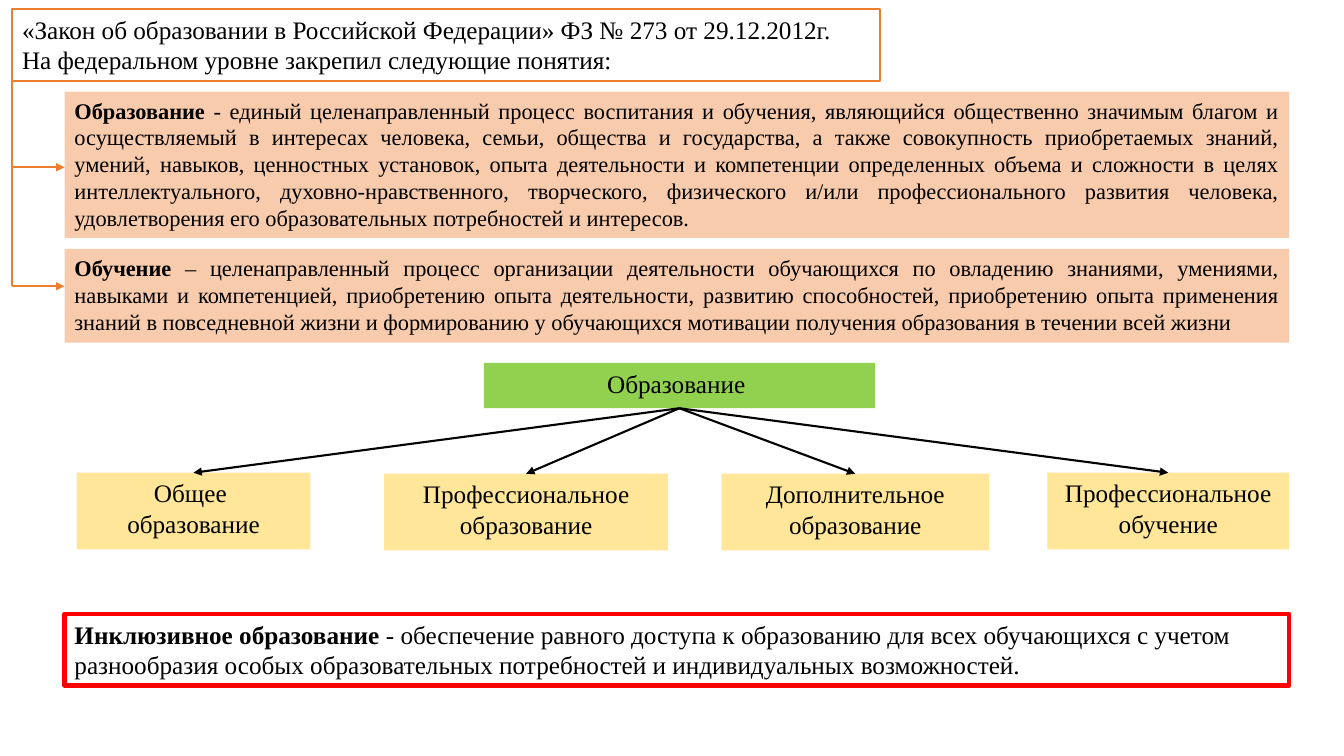
import pptx
import pptx.dml.color
import pptx.enum.shapes
import pptx.enum.text
import pptx.oxml
import pptx.oxml.ns
import pptx.util

Pt = pptx.util.Pt
RGBColor = pptx.dml.color.RGBColor
Align = pptx.enum.text.PP_ALIGN

BLACK = RGBColor(0x00, 0x00, 0x00)
WHITE = RGBColor(0xFF, 0xFF, 0xFF)
RED = RGBColor(0xFF, 0x00, 0x00)
ORANGE = RGBColor(0xED, 0x7D, 0x31)
PEACH = RGBColor(0xF8, 0xCB, 0xAD)
GREEN = RGBColor(0x92, 0xD0, 0x50)
YELLOW = RGBColor(0xFF, 0xE6, 0x99)

FONT = "Times New Roman"
LEFT, WIDTH = 46.08, 874.8
TRUNK_X, TRUNK_TOP, TRUNK_BOTTOM = 8.64, 57.6, 204.48

DEFINITIONS = [
    (65.52, 104.4, "Образование",
     " - единый целенаправленный процесс воспитания и обучения, являющийся "
     "общественно значимым благом и осуществляемый в интересах человека, семьи, "
     "общества и государства, а также совокупность приобретаемых знаний, умений, "
     "навыков, ценностных установок, опыта деятельности и компетенции определенных "
     "объема и сложности в целях интеллектуального, духовно-нравственного, "
     "творческого, физического и/или профессионального развития человека, "
     "удовлетворения его образовательных потребностей и интересов."),
    (177.84, 66.96, "Обучение",
     " – целенаправленный процесс организации деятельности обучающихся по овладению "
     "знаниями, умениями, навыками и компетенцией, приобретению опыта деятельности, "
     "развитию способностей, приобретению опыта применения знаний в повседневной "
     "жизни и формированию у обучающихся мотивации получения образования в течении "
     "всей жизни"),
]

BRANCHES = [
    (54.72, 337.68, 167.04, "Общее \nобразование"),
    (274.32, 338.4, 203.04, "Профессиональное образование"),
    (515.52, 338.4, 190.8, "Дополнительное образование"),
    (748.08, 337.68, 172.8, "Профессиональное обучение"),
]


def add_run(paragraph, text, size, bold):
    run = paragraph.add_run()
    run.text = text
    run.font.name = FONT
    run.font.size = Pt(size)
    run.font.bold = bold
    run.font.color.rgb = BLACK


def write_text(shape, text, term="", size=18, align=Align.LEFT):
    frame = shape.text_frame
    frame.word_wrap = True
    frame.auto_size = pptx.enum.text.MSO_AUTO_SIZE.SHAPE_TO_FIT_TEXT
    for index, line in enumerate(text.split("\n")):
        paragraph = frame.add_paragraph() if index else frame.paragraphs[0]
        paragraph.alignment = align
        if term and index == 0:
            add_run(paragraph, term, size, True)
        add_run(paragraph, line, size, False)


def add_box(slide, left, top, width, height, text, fill=None, line=None,
            line_width=1.5, **text_format):
    shape = slide.shapes.add_textbox(Pt(left), Pt(top), Pt(width), Pt(height))
    if fill is not None:
        shape.fill.solid()
        shape.fill.fore_color.rgb = fill
    if line is not None:
        shape.line.color.rgb = line
        shape.line.width = Pt(line_width)
    write_text(shape, text, **text_format)
    return shape


def add_line(slide, start=(0, 0), end=(0, 0), color=BLACK, arrow=True):
    connector = slide.shapes.add_connector(
        pptx.enum.shapes.MSO_CONNECTOR.STRAIGHT, *map(Pt, start + end))
    connector.line.color.rgb = color
    connector.line.width = Pt(1.5)
    if arrow:
        outline = connector.line._get_or_add_ln()
        head = pptx.oxml.parse_xml(
            f'<a:tailEnd {pptx.oxml.ns.nsdecls("a")} type="triangle"/>')
        outline.append(head)
    connector._element.spPr.append(pptx.oxml.parse_xml(
        f'<a:effectLst {pptx.oxml.ns.nsdecls("a")}/>'))
    return connector


def add_tree(slide):
    root = add_box(slide, 345.6, 259.2, 279.36, 32.4, "Образование ",
                   fill=GREEN, align=Align.CENTER)
    for left, top, width, text in BRANCHES:
        branch = add_box(slide, left, top, width, 54.72, text,
                         fill=YELLOW, align=Align.CENTER)
        connector = add_line(slide)
        connector.begin_connect(root, 2)
        connector.end_connect(branch, 0)


def add_law(slide):
    add_box(slide, TRUNK_X, 6.48, 619.92, 51.12,
            "«Закон об образовании в Российской Федерации» ФЗ № 273 от 29.12.2012г.\n"
            "На федеральном уровне закрепил следующие понятия:", line=ORANGE)
    add_line(slide, (TRUNK_X, TRUNK_TOP), (TRUNK_X, TRUNK_BOTTOM), ORANGE, arrow=False)
    for height in (119.52, TRUNK_BOTTOM):
        add_line(slide, (TRUNK_X, height), (LEFT, height), ORANGE)


def main():
    presentation = pptx.Presentation()
    presentation.slide_width = Pt(960)
    presentation.slide_height = Pt(540)
    slide = presentation.slides.add_slide(presentation.slide_layouts[6])
    for top, height, term, text in DEFINITIONS:
        add_box(slide, LEFT, top, WIDTH, height, text, fill=PEACH,
                term=term, size=16, align=Align.JUSTIFY)
    add_tree(slide)
    add_law(slide)
    add_box(slide, LEFT, 438.48, WIDTH, 51.12,
            "- обеспечение равного доступа к образованию для всех обучающихся с учетом "
            "разнообразия особых образовательных потребностей и индивидуальных "
            "возможностей.", fill=WHITE, line=RED, line_width=3,
            term="Инклюзивное образование ")
    presentation.save("out.pptx")


if __name__ == "__main__":
    main()
